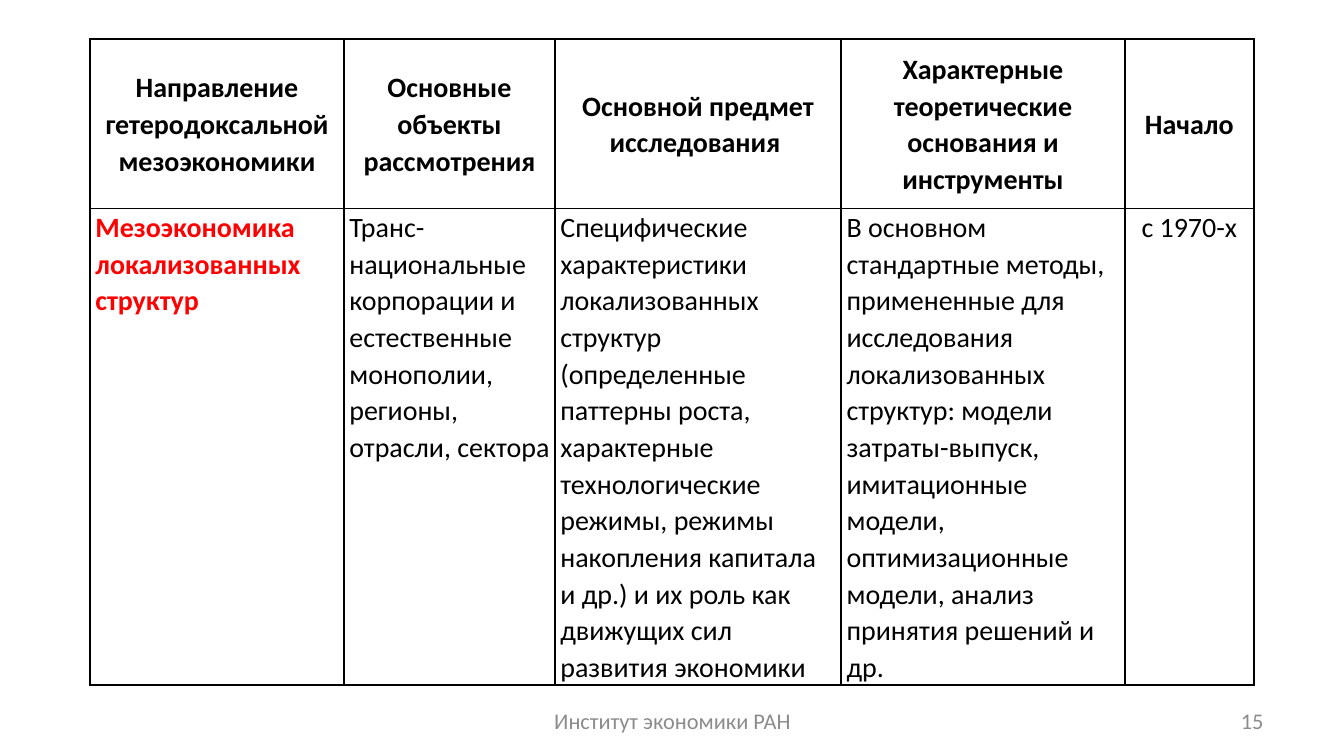
from lxml import etree
from pptx import Presentation, util as u
from pptx.dml.color import RGBColor
from pptx.enum import text as t
from pptx.oxml import ns

# Content
HEADERS = [
    "Направление гетеродоксальной мезоэкономики",
    "Основные объекты рассмотрения",
    "Основной предмет исследования ",
    "Характерные теоретические основания и инструменты",
    "Начало",
]
DIRECTION = [
    "Мезоэкономика локализованных структур",
    "Транс-национальные корпорации и естественные монополии, регионы, отрасли, сектора",
    "Специфические характеристики локализованных структур (определенные паттерны "
    "роста, характерные технологические режимы, режимы накопления капитала и др.) "
    "и их роль как движущих сил развития экономики",
    "В основном стандартные методы, примененные для исследования локализованных "
    "структур: модели затраты-выпуск, имитационные модели, oптимизационные модели, "
    "анализ принятия решений и др.",
    "с 1970-х",
]
FOOTER = "Институт экономики РАН"
PAGE_NUMBER = "15"

THEME = {
    "font": "Calibri", "table_size": 15, "footer_size": 12,
    "ink": "000000", "accent": "FF0000", "muted": "8C8C8C", "paper": "FFFFFF",
}

# Layout in inches, on a 16:9 slide
WIDTH = 10
HEIGHT = WIDTH * 9 / 16
TABLE_LEFT, TABLE_TOP = 0.67, 0.29
COLUMNS = [1.89, 1.57, 2.13, 2.11, 0.96]
ROWS = [1.26, 3.47]
CELL_INSET = 0.04
FOOTER_TOP, FOOTER_HEIGHT = 5.21, 0.3
LEFT, CENTER, RIGHT = t.PP_ALIGN.LEFT, t.PP_ALIGN.CENTER, t.PP_ALIGN.RIGHT


def write(frame, words, *, size, color, bold=False, align=LEFT, spacing=None):
    frame.word_wrap = True
    paragraph = frame.paragraphs[0]
    paragraph.alignment = align
    if spacing:
        paragraph.line_spacing = spacing
    run = paragraph.add_run()
    run.text = words
    run.font.name = THEME["font"]
    run.font.size = u.Pt(size)
    run.font.bold = bold
    run.font.color.rgb = RGBColor.from_string(color)


def add_borders(cell, color, width=1):
    properties = cell._tc.get_or_add_tcPr()
    for position, side in enumerate(("lnL", "lnR", "lnT", "lnB")):
        line = etree.Element(ns.qn(f"a:{side}"), w=str(u.Pt(width)))
        fill = etree.SubElement(line, ns.qn("a:solidFill"))
        etree.SubElement(fill, ns.qn("a:srgbClr"), val=color)
        properties.insert(position, line)


def add_table(slide):
    table = slide.shapes.add_table(
        len(ROWS), len(COLUMNS), u.Inches(TABLE_LEFT), u.Inches(TABLE_TOP),
        u.Inches(sum(COLUMNS)), u.Inches(sum(ROWS))).table
    table.first_row = table.horz_banding = False
    for column, width in zip(table.columns, COLUMNS):
        column.width = u.Inches(width)
    for row, height in zip(table.rows, ROWS):
        row.height = u.Inches(height)

    last = len(COLUMNS) - 1
    for i, texts in enumerate((HEADERS, DIRECTION)):
        header = i == 0
        for j, words in enumerate(texts):
            cell = table.cell(i, j)
            cell.margin_left = cell.margin_right = u.Inches(CELL_INSET)
            cell.margin_top = cell.margin_bottom = 0
            cell.vertical_anchor = t.MSO_ANCHOR.MIDDLE if header else t.MSO_ANCHOR.TOP
            cell.fill.solid()
            cell.fill.fore_color.rgb = RGBColor.from_string(THEME["paper"])
            add_borders(cell, THEME["ink"])
            write(cell.text_frame, words, size=THEME["table_size"], spacing=1.07,
                  color=THEME["ink"] if header or j else THEME["accent"],
                  bold=header or j == 0,
                  align=CENTER if header or j == last else LEFT)


def add_footer(slide, words, left, width, align):
    box = slide.shapes.add_textbox(u.Inches(left), u.Inches(FOOTER_TOP),
                                   u.Inches(width), u.Inches(FOOTER_HEIGHT))
    box.text_frame.vertical_anchor = t.MSO_ANCHOR.MIDDLE
    write(box.text_frame, words, size=THEME["footer_size"],
          color=THEME["muted"], align=align)


def main():
    presentation = Presentation()
    presentation.slide_width = u.Inches(WIDTH)
    presentation.slide_height = u.Inches(HEIGHT)
    slide = presentation.slides.add_slide(presentation.slide_layouts[6])
    add_table(slide)
    # Footer line: organisation in the middle, page number at the right
    add_footer(slide, FOOTER, 3.42, 3.17, CENTER)
    add_footer(slide, PAGE_NUMBER, 7.17, 2.33, RIGHT)
    presentation.save("out.pptx")


if __name__ == "__main__":
    main()
